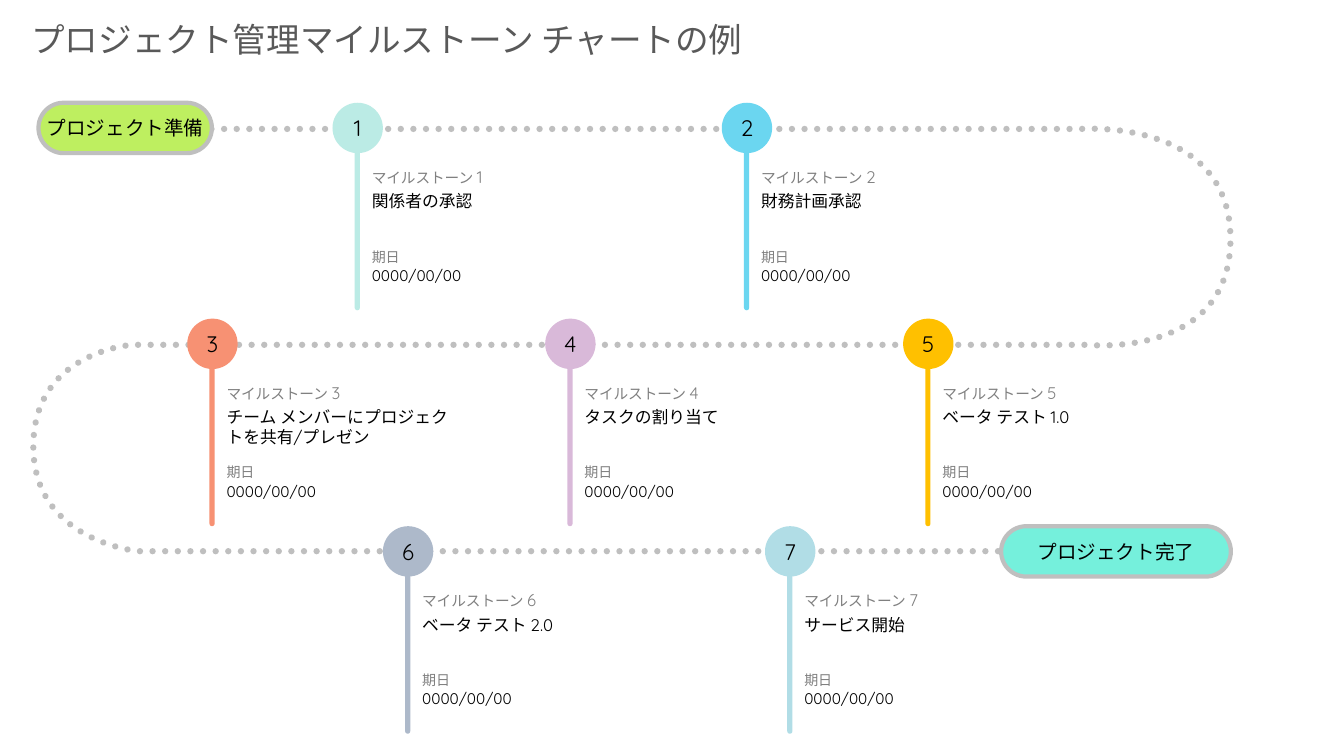
from lxml import etree
from pptx import Presentation
from pptx import util as u
from pptx.dml import color as col
from pptx.enum import dml, shapes, text
from pptx.oxml import ns

Cm = u.Cm
FONT = "Quicksand"
HEX = {
    "title": "595959", "ink": "000000", "soft": "808080", "road": "BFBFBF",
    "start": "BEEF60", "end": "75F0DC",
    "mint": "BBEBE5", "sky": "6BD6F0", "coral": "F79173", "lilac": "D9B9D9",
    "gold": "FFC000", "slate": "ADB9CA", "ice": "B1DDE6",
}
DISC = 1.27
ROWS = (2.59, 8.03, 13.26)

# row, left edge, colour, task, width of task text
STONES = [
    (0, 8.38, "mint", "関係者の承認", 3.48),
    (0, 18.19, "sky", "財務計画承認", 3.48),
    (1, 4.72, "coral", "チーム メンバーにプロジェクトを共有/プレゼン", 5.94),
    (1, 13.74, "lilac", "タスクの割り当て", 3.48),
    (1, 22.76, "gold", "ベータ テスト 1.0", 3.48),
    (2, 9.65, "slate", "ベータ テスト 2.0", 3.48),
    (2, 19.28, "ice", "サービス開始", 3.48),
]

# Stops of the road; a curved stretch has two control points before its end
START = (5.33, 3.25)
ROAD = [
    [(27.25, 3.25)],
    [(27.25, 3.25), (31.01, 2.97), (31.01, 6.02)],
    [(31.01, 9.07), (27.38, 8.69), (27.38, 8.69)],
    [(3.33, 8.69)],
    [(3.33, 8.69), (0.84, 8.86), (0.84, 11.25)],
    [(0.84, 13.64), (3.48, 13.89), (3.48, 13.89)],
    [(26.11, 13.89)],
]


def rgb(name):
    return col.RGBColor.from_string(HEX[name])


def style(para, size, ink):
    para.font.name = FONT
    para.font.size = u.Pt(size)
    para.font.color.rgb = rgb(ink)


def trim(frame):
    frame.margin_left = frame.margin_right = 0
    frame.margin_top = frame.margin_bottom = 0


def write(home, box, words, size, ink, flush=True):
    frame = home.add_textbox(*map(Cm, box)).text_frame
    frame.word_wrap = True
    if flush:
        trim(frame)
    para = frame.paragraphs[0]
    para.add_run().text = words
    style(para, size, ink)
    return para


def solid(home, kind, box, fill, words="", size=14, edge=None):
    item = home.add_shape(kind, *map(Cm, box))
    item.shadow.inherit = False
    item.fill.solid()
    item.fill.fore_color.rgb = rgb(fill)
    if edge:
        item.line.color.rgb = rgb("road")
        item.line.width = u.Pt(edge)
    else:
        item.line.fill.background()
    if kind == shapes.MSO_SHAPE.ROUNDED_RECTANGLE:
        item.adjustments[0] = 0.5
    if words:
        frame = item.text_frame
        trim(frame)
        frame.vertical_anchor = text.MSO_ANCHOR.MIDDLE
        para = frame.paragraphs[0]
        para.text = words
        para.alignment = text.PP_ALIGN.CENTER
        style(para, size, "ink")


def road(home):
    pen = home.build_freeform(*map(Cm, START))
    pen.add_line_segments([tuple(map(Cm, leg[-1])) for leg in ROAD], close=False)
    item = pen.convert_to_shape()
    # Bend the stretches that have control points
    steps = list(item._element.iter(ns.qn("a:lnTo")))
    for step, leg in zip(steps, ROAD):
        if len(leg) == 3:
            bend = etree.Element(ns.qn("a:cubicBezTo"))
            for x, y in leg:
                etree.SubElement(bend, ns.qn("a:pt"), x=str(Cm(x) - item.left),
                                 y=str(Cm(y) - item.top))
            step.getparent().replace(step, bend)
    item.shadow.inherit = False
    item.fill.background()
    item.line.color.rgb = rgb("road")
    item.line.width = u.Pt(4.5)
    item.line.dash_style = dml.MSO_LINE.ROUND_DOT
    # Round caps and joins turn the dashes into dots
    line = item.line._get_or_add_ln()
    line.set("cap", "rnd")
    etree.SubElement(line, ns.qn("a:round"))


def stone(home, num, x, y, tint, task, wide):
    part = home.add_group_shape().shapes
    left = x + 0.99
    # Stem
    solid(part, shapes.MSO_SHAPE.ROUNDED_RECTANGLE,
          (x + 0.56, y + 0.48, 0.13, 4.75), tint)
    # Heading, whose gap and number grow in size
    head = write(part, (left, y + 1.61, 3.1, 0.66), "マイルストーン", 10.5, "soft")
    for words, size in ((" ", 11), (str(num), 12)):
        run = head.add_run()
        run.text = words
        run.font.size = u.Pt(size)
    # Task and due date
    write(part, (left, y + 2.22, wide, 1.45), task, 12, "ink")
    due = write(part, (left, y + 3.66, 2.03, 0.51), "期日", 10, "soft")
    due.space_after = u.Pt(3)
    write(part, (left, y + 4.11, 2.29, 0.66), "0000/00/00", 11, "ink")
    # Numbered disc
    solid(part, shapes.MSO_SHAPE.OVAL, (x, y, DISC, DISC), tint, str(num), 16)


def chip(home, box, fill, words):
    solid(home, shapes.MSO_SHAPE.ROUNDED_RECTANGLE, box, fill, words, 14, 3)


def main():
    deck = Presentation()
    deck.slide_width, deck.slide_height = Cm(33.87), Cm(19.05)
    home = deck.slides.add_slide(deck.slide_layouts[6]).shapes

    write(home, (0.54, 0.36, 22.63, 1.27),
          "プロジェクト管理マイルストーン チャートの例", 24, "title", False)
    road(home)
    chip(home, (0.97, ROWS[0], 4.37, DISC), "start", "プロジェクト準備")
    for num, (row, x, tint, task, wide) in enumerate(STONES, 1):
        stone(home, num, x, ROWS[row], tint, task, wide)
    chip(home, (25.23, ROWS[2], 5.79, DISC), "end", "プロジェクト完了")

    deck.save("out.pptx")


if __name__ == "__main__":
    main()
